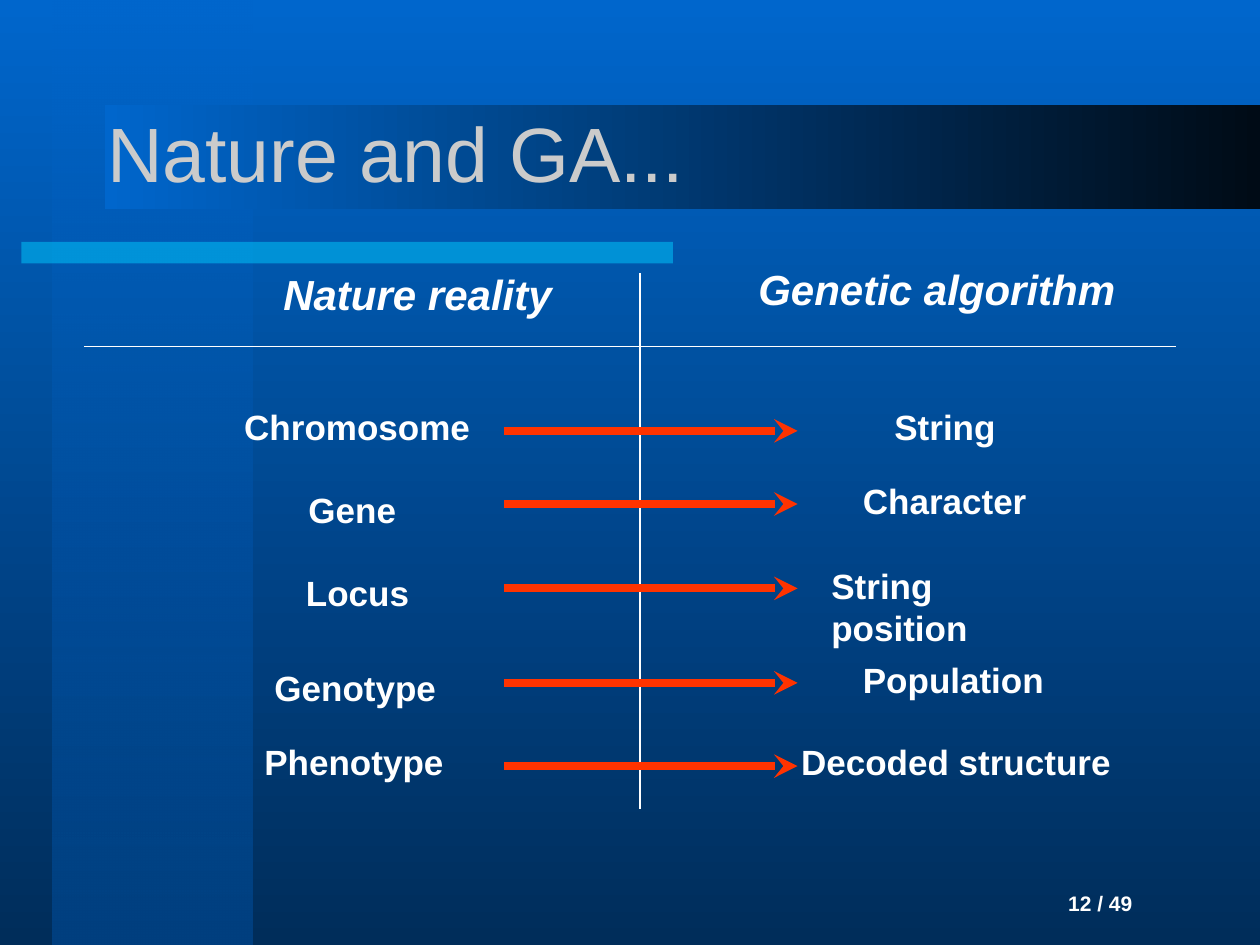
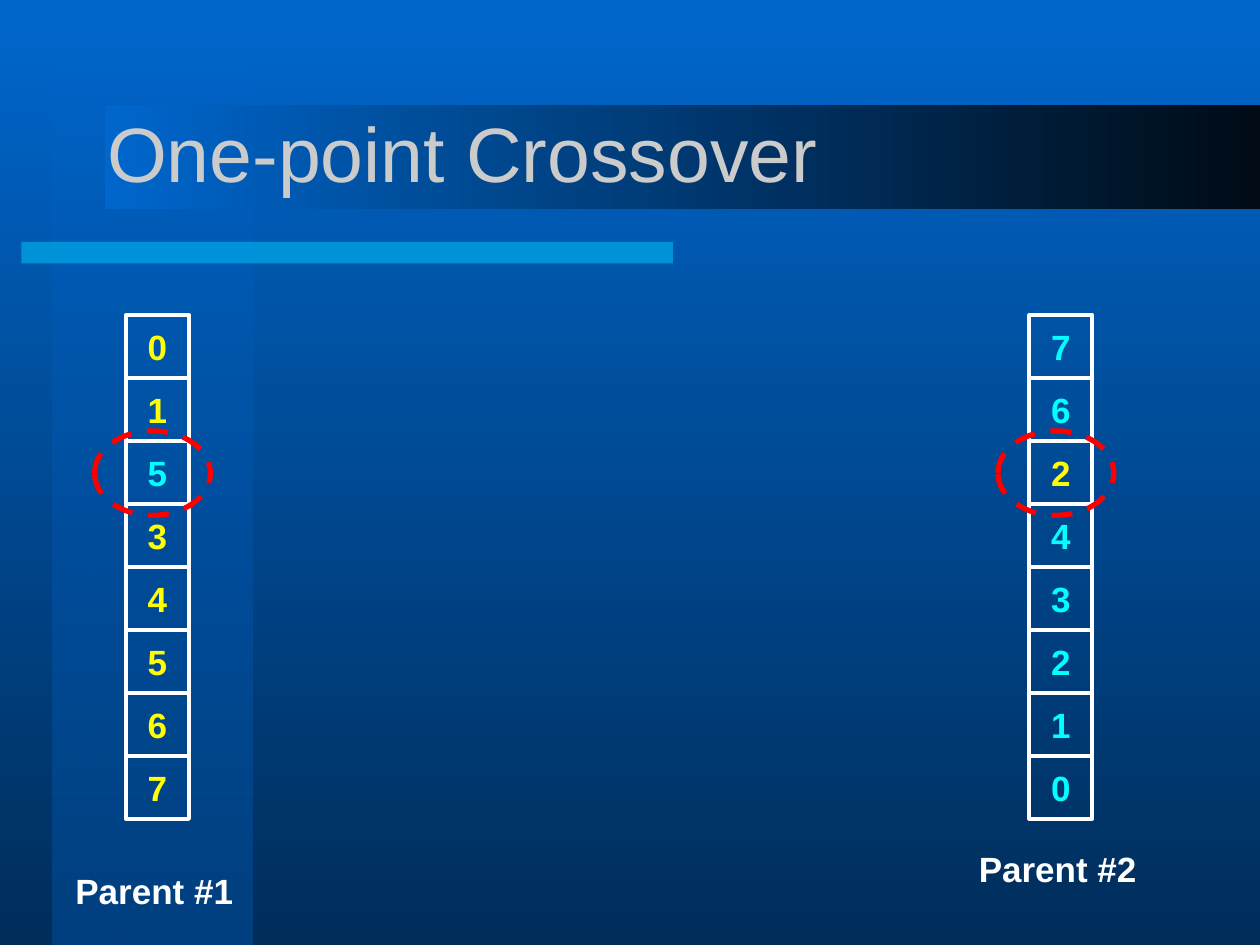
from lxml.etree import SubElement
from pptx import Presentation
from pptx.dml.color import RGBColor
from pptx.enum.dml import MSO_LINE
from pptx.enum.shapes import MSO_CONNECTOR, MSO_SHAPE
from pptx.enum.text import MSO_ANCHOR, MSO_AUTO_SIZE, PP_ALIGN
from pptx.oxml.ns import qn
from pptx.util import Inches, Pt

FONT = "Arial"
WHITE = RGBColor(0xFF, 0xFF, 0xFF)
TITLE_GREY = RGBColor(0xCB, 0xCB, 0xCB)
BLUE = RGBColor(0x00, 0x66, 0xCC)
DEEP_BLUE = RGBColor(0x00, 0x2D, 0x5A)
COLUMN_BLUE = RGBColor(0x00, 0x40, 0x80)
NEAR_BLACK = RGBColor(0x00, 0x0B, 0x16)
BAR_CYAN = RGBColor(0x00, 0xCC, 0xFF)
ARROW_RED = RGBColor(0xFF, 0x33, 0x00)
RED = RGBColor(0xFF, 0x00, 0x00)
YELLOW = RGBColor(0xFF, 0xFF, 0x00)
CYAN = RGBColor(0x00, 0xFF, 0xFF)

CELL = 0.5
GENES_TOP = 2.5
SWAPPED = 2

NATURE_TERMS = [
    ("Chromosome", 1.84, 3.17, 2.1),
    ("Gene", 2.35, 3.83, 1.1),
    ("Locus", 2.33, 4.49, 1.2),
    ("Genotype", 2.08, 5.24, 1.7),
    ("Phenotype", 2, 5.83, 1.8),
]
ALGORITHM_TERMS = [
    ("String", 7, 3.17, 1.2),
    ("Character", 6.75, 3.76, 1.7),
    ("String position", 6.5, 4.43, 1.5),
    ("Population", 6.75, 5.18, 1.8),
    ("Decoded structure", 6.26, 5.83, 2.9),
]
ARROW_ROWS = [3.42, 4, 4.67, 5.42, 6.08]


def set_font(p, size, color, bold=False, italic=False):
    p.font.name = FONT
    p.font.size = Pt(size)
    p.font.color.rgb = color
    p.font.bold = bold
    p.font.italic = italic


def set_gradient(fill, start, end, angle):
    fill.gradient()
    fill.gradient_angle = angle
    for stop, color, position in zip(fill.gradient_stops, (start, end), (0, 1)):
        stop.color.rgb = color
        stop.position = position


def make_half_transparent(sp):
    color = next(sp.element.spPr.iter(qn("a:srgbClr")))
    SubElement(color, qn("a:alpha")).set("val", "50000")


def add_shape(slide, kind, left, top, width, height):
    sp = slide.shapes.add_shape(
        kind, Inches(left), Inches(top), Inches(width), Inches(height))
    sp.shadow.inherit = False
    sp.fill.background()
    sp.line.fill.background()
    return sp


def style_master(master, slide):
    set_gradient(master.background.fill, BLUE, DEEP_BLUE, 270)
    column = add_shape(slide, MSO_SHAPE.RECTANGLE, 0.42, 0, 1.58, 7.5)
    set_gradient(column.fill, BLUE, COLUMN_BLUE, 270)
    make_half_transparent(column)
    bar = add_shape(slide, MSO_SHAPE.RECTANGLE, 0.17, 1.92, 5.17, 0.17)
    bar.fill.solid()
    bar.fill.fore_color.rgb = BAR_CYAN
    make_half_transparent(bar)
    band = add_shape(slide, MSO_SHAPE.RECTANGLE, 0.83, 0.83, 9.17, 0.83)
    set_gradient(band.fill, BLUE, NEAR_BLACK, 0)
    for i, sp in enumerate((column, bar, band)):
        sp.element.nvSpPr.cNvPr.set("id", str(100 + i))
        master.shapes.element.insert(2 + i, sp.element)


def set_title(slide, text):
    title = slide.shapes.title
    title.left, title.top = Inches(0.75), Inches(0.58)
    title.width, title.height = Inches(8.5), Inches(1.25)
    tf = title.text_frame
    tf.text = text
    tf.auto_size = MSO_AUTO_SIZE.NONE
    tf.vertical_anchor = MSO_ANCHOR.MIDDLE
    p = tf.paragraphs[0]
    p.alignment = PP_ALIGN.LEFT
    set_font(p, 44, TITLE_GREY)


def add_label(slide, text, left, top, width, size=20, italic=False):
    box = slide.shapes.add_textbox(
        Inches(left), Inches(top), Inches(width), Inches(0.43))
    tf = box.text_frame
    tf.word_wrap = True
    tf.text = text
    set_font(tf.paragraphs[0], size, WHITE, True, italic)
    return box


def add_line(slide, x1, y1, x2, y2, color=WHITE, width=1, arrow=False):
    line = slide.shapes.add_connector(
        MSO_CONNECTOR.STRAIGHT, Inches(x1), Inches(y1), Inches(x2), Inches(y2))
    line.line.color.rgb = color
    line.line.width = Pt(width)
    if arrow:
        ln = line.element.spPr.find(qn("a:ln"))
        SubElement(ln, qn("a:tailEnd")).set("type", "stealth")
    SubElement(line.element.spPr, qn("a:effectLst"))


def add_gene(slide, text, left, top, color):
    sp = add_shape(slide, MSO_SHAPE.RECTANGLE, left, top, CELL, CELL)
    sp.line.color.rgb = WHITE
    sp.line.width = Pt(2.25)
    tf = sp.text_frame
    tf.word_wrap = False
    tf.vertical_anchor = MSO_ANCHOR.MIDDLE
    tf.text = text
    p = tf.paragraphs[0]
    p.alignment = PP_ALIGN.CENTER
    set_font(p, 20, color, True)


def add_parent(slide, genes, left, color, swapped_color):
    for i, gene in enumerate(genes):
        add_gene(slide, gene, left, GENES_TOP + i * CELL,
                 swapped_color if i == SWAPPED else color)


def add_swap_ring(slide, gene_left):
    ring = add_shape(slide, MSO_SHAPE.OVAL, gene_left - 0.25, 3.42, 0.92, 0.67)
    ring.line.color.rgb = RED
    ring.line.width = Pt(3)
    ring.line.dash_style = MSO_LINE.DASH


def build_nature(slide):
    set_title(slide, "Nature and GA...")
    number = add_label(slide, "12 / 49", 8.38, 6.92, 1, 12)
    number.height = Inches(0.5)
    number.text_frame.vertical_anchor = MSO_ANCHOR.MIDDLE
    add_line(slide, 5.08, 2.17, 5.08, 6.42)
    add_line(slide, 9.33, 2.75, 0.67, 2.75)
    add_label(slide, "Nature reality", 2.15, 2.08, 2.6, 24, True)
    add_label(slide, "Genetic algorithm", 5.92, 2.04, 3.3, 24, True)
    for text, left, top, width in NATURE_TERMS + ALGORITHM_TERMS:
        add_label(slide, text, left, top, width)
    for y in ARROW_ROWS:
        add_line(slide, 4, y, 6.33, y, ARROW_RED, 4.5, True)


def build_crossover(slide):
    set_title(slide, "One-point Crossover")
    add_label(slide, "Parent #1", 0.5, 6.85, 1.6)
    add_label(slide, "Parent #2", 7.67, 6.68, 1.6)
    add_parent(slide, "01534567", 1, YELLOW, CYAN)
    add_parent(slide, "76243210", 8.17, CYAN, YELLOW)
    for gene_left in (1, 8.17):
        add_swap_ring(slide, gene_left)


def main():
    prs = Presentation()
    prs.slide_width, prs.slide_height = Inches(10), Inches(7.5)
    title_only = prs.slide_layouts[5]
    nature = prs.slides.add_slide(title_only)
    crossover = prs.slides.add_slide(title_only)
    style_master(prs.slide_master, nature)
    build_nature(nature)
    build_crossover(crossover)
    prs.save("out.pptx")


if __name__ == "__main__":
    main()
